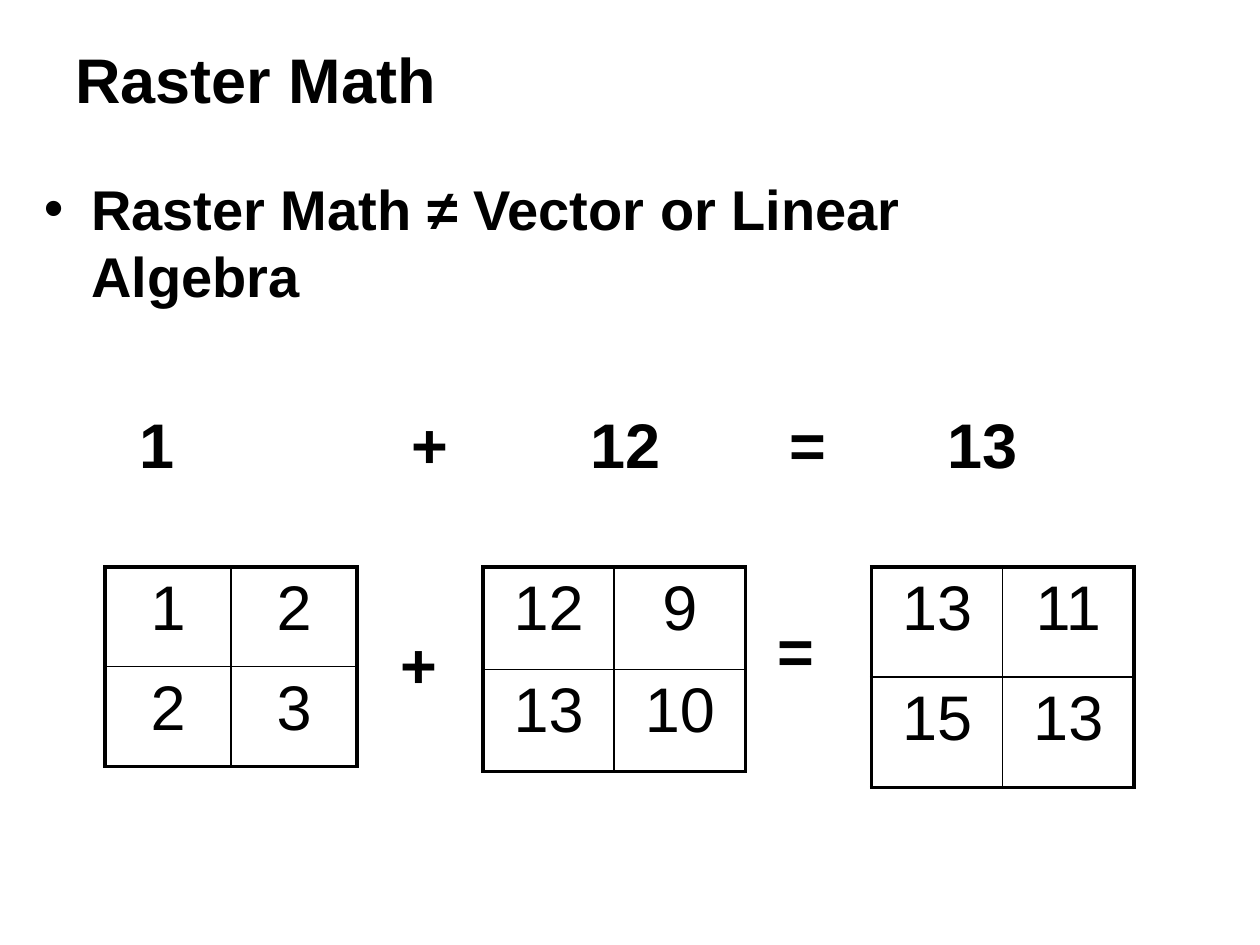
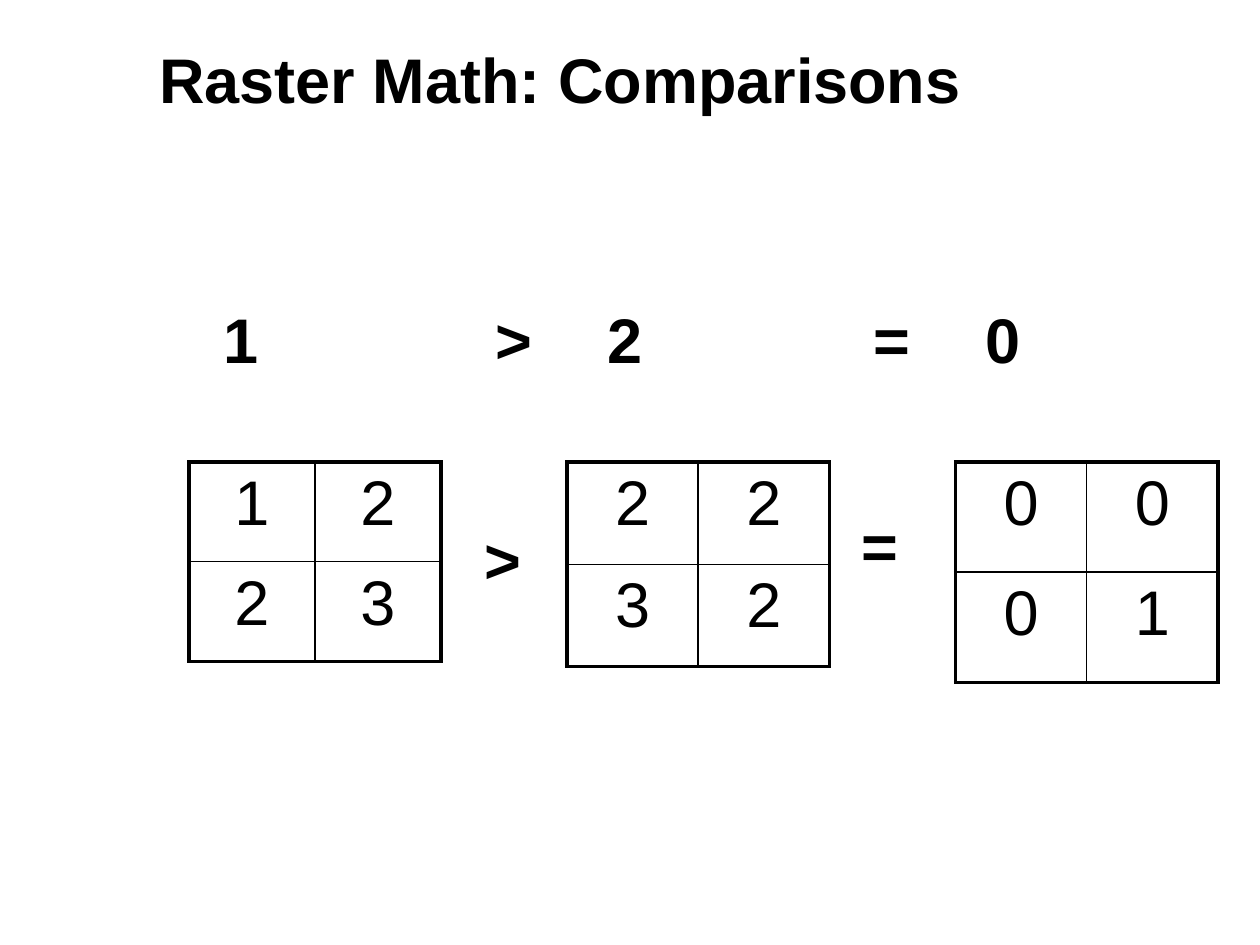
from dataclasses import dataclass

from pptx import Presentation
from pptx.dml.color import RGBColor
from pptx.enum.text import MSO_ANCHOR, MSO_AUTO_SIZE, PP_ALIGN
from pptx.oxml import parse_xml
from pptx.oxml.ns import nsdecls
from pptx.util import Pt

PX = 9525  # EMU per px, 96 px to the inch


@dataclass(frozen=True)
class Theme:
    font: str = "Arial"
    ink: str = "000000"
    large: int = 36
    body: int = 32
    outer_line: float = 2.25
    inner_line: float = 1


@dataclass(frozen=True)
class Label:
    text: str
    x: int
    y: int
    w: int = 47


@dataclass(frozen=True)
class Grid:
    x: int
    col_w: int
    row_h: int


@dataclass(frozen=True)
class Example:
    title: str
    operator: str
    numbers: tuple[Label, ...]
    rasters: tuple[tuple[str, ...], ...]
    dx: int = 0
    dy: int = 0


THEME = Theme()
GRIDS = (Grid(80, 96, 76), Grid(368, 100, 78), Grid(664, 100, 84))
GRID_TOP = 432
NUMBER_TOP = 304
TITLE_X = 48
BLOCK_W = 832

EXAMPLES = (
    Example(
        "Raster Math", "+",
        (Label("1", 96, NUMBER_TOP), Label("12", 440, NUMBER_TOP, 73),
         Label("13", 712, NUMBER_TOP, 73)),
        (("1", "2", "2", "3"), ("12", "9", "13", "10"), ("13", "11", "15", "13")),
    ),
    Example(
        "Raster Math: Comparisons", ">",
        (Label("1", 96, NUMBER_TOP), Label("2", 389, NUMBER_TOP),
         Label("0", 677, NUMBER_TOP)),
        (("1", "2", "2", "3"), ("2", "2", "3", "2"), ("0", "0", "0", "1")),
        dx=64, dy=-80,
    ),
)


def style(p, size: int, bold: bool = True) -> None:
    p.font.name = THEME.font
    p.font.size = Pt(size)
    p.font.bold = bold
    p.font.color.rgb = RGBColor.from_string(THEME.ink)


def add_text(s, text: str, x: int, y: int, w: int, h: int, size: int):
    tf = s.shapes.add_textbox(x * PX, y * PX, w * PX, h * PX).text_frame
    tf.word_wrap = True
    p = tf.paragraphs[0]
    p.text = text
    style(p, size)
    return tf


def add_title(s, text: str, dx: int) -> None:
    tf = add_text(s, text, TITLE_X + dx, 0, BLOCK_W, 120, THEME.large)
    tf.vertical_anchor = MSO_ANCHOR.MIDDLE


def add_label(s, label: Label, dx: int, dy: int) -> None:
    tf = add_text(s, label.text, label.x + dx, label.y + dy, label.w, 67, THEME.large)
    tf.word_wrap = False
    tf.auto_size = MSO_AUTO_SIZE.SHAPE_TO_FIT_TEXT
    tf.paragraphs[0].alignment = PP_ALIGN.CENTER


def add_bullet(s, text: str) -> None:
    tf = add_text(s, text, 24, 128, BLOCK_W, 520, THEME.body)
    pPr = tf.paragraphs[0]._p.get_or_add_pPr()
    pPr.set("marL", str(36 * PX))
    pPr.set("indent", str(-36 * PX))
    pPr.insert(0, parse_xml(f'<a:buFont {nsdecls("a")} typeface="{THEME.font}"/>'))
    pPr.insert(1, parse_xml(f'<a:buChar {nsdecls("a")} char="•"/>'))


def set_borders(cell, row: int, col: int) -> None:
    """Heavy lines round the 2 x 2 grid, thin lines inside it."""
    outer = {"L": col == 0, "R": col == 1, "T": row == 0, "B": row == 1}
    tcPr = cell._tc.get_or_add_tcPr()
    for i, (side, heavy) in enumerate(outer.items()):
        width = Pt(THEME.outer_line if heavy else THEME.inner_line)
        tcPr.insert(i, parse_xml(
            f'<a:ln{side} {nsdecls("a")} w="{int(width)}"><a:solidFill>'
            f'<a:srgbClr val="{THEME.ink}"/></a:solidFill></a:ln{side}>'))


def add_raster(s, grid: Grid, values: tuple[str, ...], dx: int, dy: int) -> None:
    table = s.shapes.add_table(
        2, 2, (grid.x + dx) * PX, (GRID_TOP + dy) * PX,
        2 * grid.col_w * PX, 2 * grid.row_h * PX).table
    table.first_row = table.horz_banding = False
    for i, value in enumerate(values):
        row, col = divmod(i, 2)
        cell = table.cell(row, col)
        cell.fill.background()
        set_borders(cell, row, col)
        p = cell.text_frame.paragraphs[0]
        p.text = value
        p.alignment = PP_ALIGN.CENTER
        style(p, THEME.large, bold=False)


def add_example(prs, example: Example):
    s = prs.slides.add_slide(prs.slide_layouts[6])
    dx, dy = example.dx, example.dy
    add_title(s, example.title, dx)

    # Rasters
    for grid, values in zip(GRIDS, example.rasters):
        add_raster(s, grid, values, dx, dy)

    # Signs between the rasters, then the sum in single numbers
    signs = (
        Label(example.operator, 296, 472), Label("=", 583, 461),
        Label(example.operator, 304, NUMBER_TOP), Label("=", 592, NUMBER_TOP),
    )
    for label in signs + example.numbers:
        add_label(s, label, dx, dy)
    return s


def main() -> None:
    prs = Presentation()
    prs.slide_width, prs.slide_height = 960 * PX, 720 * PX
    slides = [add_example(prs, example) for example in EXAMPLES]
    add_bullet(slides[0], "Raster Math ≠ Vector or Linear Algebra")
    prs.save("out.pptx")


if __name__ == "__main__":
    main()
